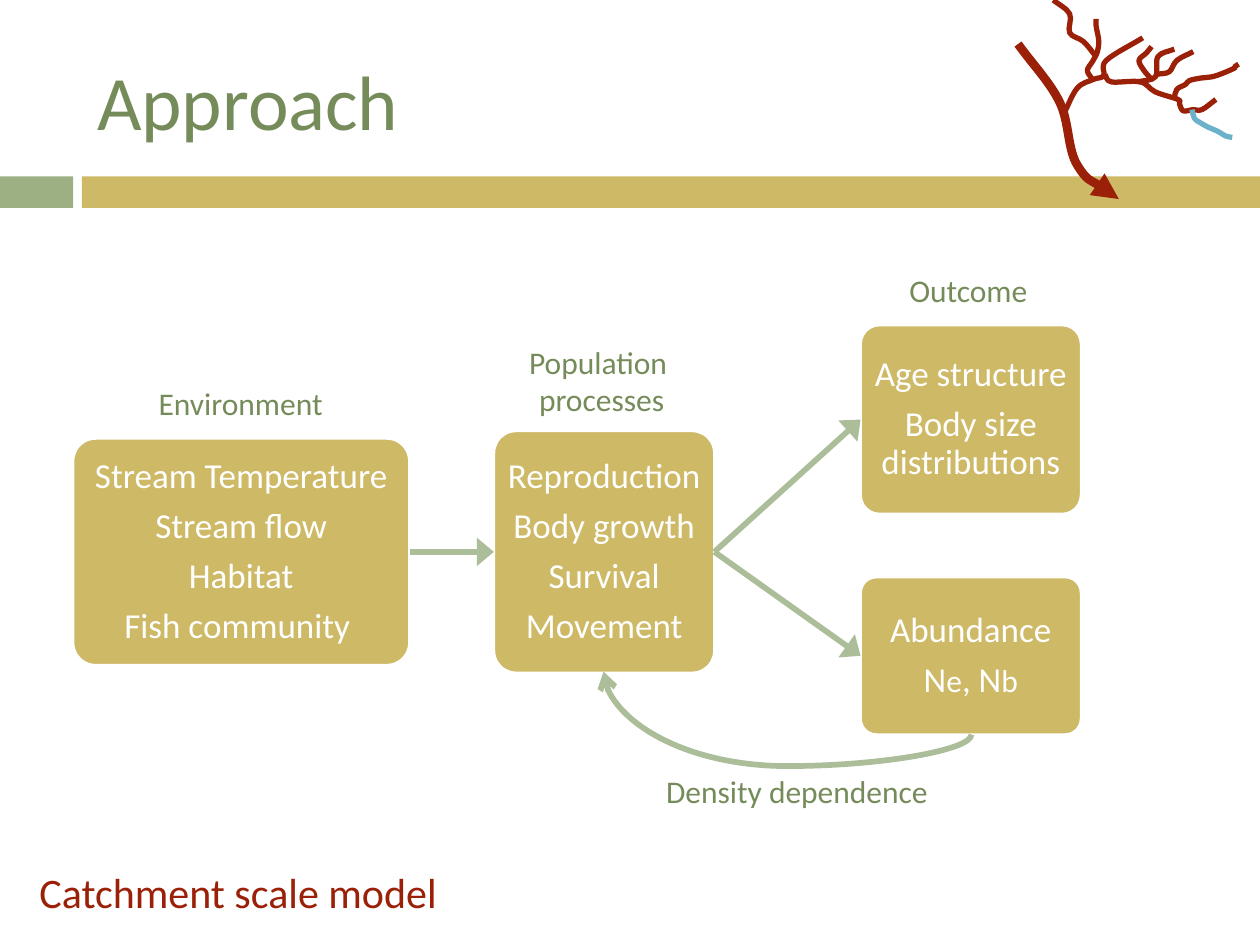
from lxml import etree
from pptx import Presentation
from pptx import util as u
from pptx.dml.color import RGBColor
from pptx.enum import shapes, text
from pptx.oxml.ns import qn

COLORS = {
    "gold": "CEB966",
    "sage": "9CB084",
    "arrow": "ACBD99",
    "label": "758C5A",
    "red": "9A2008",
    "blue": "6BB1C9",
    "white": "FFFFFF",
}
FONT = "Calibri"

# River network: points along each branch, in inches
MAIN_STEM = [(8.88, 1.58), (8.55, 1.31), (8.41, 0.81), (8.08, 0.35)]
STUDY_BRANCH = [(9.46, 0.87), (9.48, 0.94), (9.52, 0.97), (9.59, 1.01),
                (9.66, 1.04), (9.73, 1.08), (9.78, 1.09)]
TRIBUTARIES = [
    [(8.77, 0.59), (8.82, 0.65), (9.05, 0.65), (9.17, 0.73), (9.35, 0.79),
     (9.36, 0.82), (9.39, 0.88), (9.47, 0.87), (9.54, 0.87), (9.65, 0.79)],
    [(9.32, 0.78), (9.34, 0.71), (9.41, 0.67), (9.44, 0.64), (9.53, 0.62),
     (9.62, 0.61), (9.71, 0.58), (9.8, 0.54), (9.8, 0.53), (9.83, 0.51)],
    [(8.67, 0.63), (8.63, 0.56), (8.67, 0.49), (8.71, 0.41), (8.72, 0.32),
     (8.7, 0.21), (8.7, 0.15)],
    [(8.7, 0.45), (8.6, 0.33), (8.49, 0.26), (8.49, 0.11), (8.36, 0)],
    [(8.44, 0.91), (8.55, 0.7), (8.68, 0.63), (8.76, 0.6), (8.78, 0.48), (9.07, 0.3)],
    [(9.03, 0.65), (9.17, 0.61), (9.19, 0.45), (9.32, 0.39)],
    [(9.18, 0.59), (9.28, 0.57), (9.34, 0.48), (9.47, 0.41)],
    [(9.14, 0.63), (9.08, 0.56), (9.04, 0.48), (9.1, 0.42), (9.14, 0.37)],
]


def bezier_points(points):
    """Return two control points and an end point for each smooth segment."""
    def beyond(end, inner):
        return tuple(2 * e - i for e, i in zip(end, inner))

    ends = [beyond(points[0], points[1]), *points, beyond(points[-1], points[-2])]
    curve = []
    for a, b, c, d in zip(ends, ends[1:], ends[2:], ends[3:]):
        curve += [tuple(q + (r - p) / 6 for p, q, r in zip(a, b, c)),
                  tuple(r - (s - q) / 6 for q, r, s in zip(b, c, d)),
                  c]
    return curve


class SlideBuilder:
    def __init__(self, slide):
        self.s = slide

    def style_run(self, r, size, color):
        r.font.name = FONT
        r.font.size = u.Pt(size)
        r.font.color.rgb = RGBColor.from_string(COLORS[color])

    def style_line(self, sp, color, width, end=None, **head):
        """Format a line; end is headEnd or tailEnd when it has an arrowhead."""
        sp.line.color.rgb = RGBColor.from_string(COLORS[color])
        sp.line.width = u.Pt(width)
        if end:
            ln = sp._element.spPr.find(qn("a:ln"))
            etree.SubElement(ln, qn(f"a:{end}"), **head)

    def title(self, words, x, y, w, h):
        sp = self.s.shapes.title
        sp.left, sp.top, sp.width, sp.height = map(u.Inches, (x, y, w, h))
        tf = sp.text_frame
        tf.text = words
        tf.vertical_anchor = text.MSO_ANCHOR.MIDDLE
        p = tf.paragraphs[0]
        p.alignment = text.PP_ALIGN.LEFT
        self.style_run(p.runs[0], 44, "label")

    def shape(self, kind, x, y, w, h, color):
        sp = self.s.shapes.add_shape(kind, *map(u.Inches, (x, y, w, h)))
        sp.shadow.inherit = False
        sp.fill.solid()
        sp.fill.fore_color.rgb = RGBColor.from_string(COLORS[color])
        return sp

    def bar(self, x, w, color):
        sp = self.shape(shapes.MSO_SHAPE.RECTANGLE, x, 1.4, w, 0.25, color)
        sp.line.fill.background()

    def box(self, x, y, w, h, lines):
        """Add a rounded box; each line is a list of (words, size) runs."""
        sp = self.shape(shapes.MSO_SHAPE.ROUNDED_RECTANGLE, x, y, w, h, "gold")
        sp.adjustments[0] = 0.1
        self.style_line(sp, "white", 1.5)
        tf = sp.text_frame
        tf.word_wrap = True
        tf.vertical_anchor = text.MSO_ANCHOR.MIDDLE
        tf.margin_left = tf.margin_right = u.Inches(0.03)
        tf.margin_top = tf.margin_bottom = u.Inches(0.08)
        for i, runs in enumerate(lines):
            p = tf.add_paragraph() if i else tf.paragraphs[0]
            p.alignment = text.PP_ALIGN.CENTER
            p.line_spacing = 0.9
            p.space_after = u.Pt(7)
            for words, size in runs:
                r = p.add_run()
                r.text = words
                self.style_run(r, size, "white")
        return sp

    def label(self, words, x, y, w, h=0.4, size=18, color="label"):
        sp = self.s.shapes.add_textbox(*map(u.Inches, (x, y, w, h)))
        tf = sp.text_frame
        tf.text = words
        tf.word_wrap = False
        tf.auto_size = text.MSO_AUTO_SIZE.SHAPE_TO_FIT_TEXT
        for p in tf.paragraphs:
            p.alignment = text.PP_ALIGN.CENTER
            self.style_run(p.runs[0], size, color)

    def connector(self, kind, ends, **head):
        cn = self.s.shapes.add_connector(kind, *map(u.Inches, ends))
        self.style_line(cn, "arrow", 3.25, "tailEnd", **head)
        etree.SubElement(cn._element.spPr, qn("a:effectLst"))
        return cn

    def arrow(self, start, end):
        """Join the right side of one box to the left side of another."""
        cn = self.connector(shapes.MSO_CONNECTOR.STRAIGHT, (0, 0, 1, 1),
                            type="triangle", w="lg", len="med")
        cn.begin_connect(start, 3)
        cn.end_connect(end, 1)

    def feedback_arrow(self, x1, y1, x2, y2):
        """Curve from one bottom side to another, sagging below both."""
        mid_x, mid_y = (x1 + x2) / 2, (y1 + y2) / 2
        half_w, half_h = (y1 - y2) / 2, (x1 - x2) / 2
        cn = self.connector(
            shapes.MSO_CONNECTOR.CURVE,
            (mid_x + half_w, mid_y - half_h, mid_x - half_w, mid_y + half_h),
            type="arrow")
        spPr = cn._element.spPr
        spPr.find(qn("a:xfrm")).set("rot", str(90 * 60000))
        geom = spPr.find(qn("a:prstGeom"))
        guides = geom.find(qn("a:avLst"))
        if guides is None:
            guides = etree.SubElement(geom, qn("a:avLst"))
        etree.SubElement(guides, qn("a:gd"), name="adj1", fmla="val -50000")

    def stream(self, points, color="red", width=3, end=None):
        """Draw a smooth open curve through the points."""
        fb = self.s.shapes.build_freeform(*map(u.Inches, points[0]), scale=1.0)
        fb.add_line_segments(
            [tuple(map(u.Inches, pt)) for pt in bezier_points(points)], close=False)
        sp = fb.convert_to_shape()
        sp.shadow.inherit = False
        sp.fill.background()
        self.style_line(sp, color, width, end, type="triangle")
        segments = list(sp._element.iter(qn("a:lnTo")))
        outline = segments[0].getparent()
        for i in range(0, len(segments), 3):
            cubic = etree.SubElement(outline, qn("a:cubicBezTo"))
            for segment in segments[i:i + 3]:
                cubic.append(segment[0])
                outline.remove(segment)


def plain(*lines):
    return [[(words, 20)] for words in lines]


def main():
    prs = Presentation()
    prs.slide_width, prs.slide_height = u.Inches(10), u.Inches(7.5)
    b = SlideBuilder(prs.slides.add_slide(prs.slide_layouts[5]))

    b.bar(0, 0.58, "sage")
    b.bar(0.65, 9.35, "gold")
    b.title("Approach", 0.67, 0.25, 8.92, 1.08)

    environment = b.box(0.58, 3.48, 2.67, 1.8, plain(
        "Stream Temperature", "Stream flow", "Habitat", "Fish community "))
    processes = b.box(3.92, 3.42, 1.75, 1.92, plain(
        "Reproduction", "Body growth", "Survival", "Movement"))
    structure = b.box(6.83, 2.58, 1.75, 1.5, plain(
        "Age structure", "Body size distributions"))
    abundance = b.box(6.83, 4.58, 1.75, 1.25, plain("Abundance") + [
        [("N", 20), ("e", 18), (", N", 20), ("b", 18)]])

    b.arrow(environment, processes)
    b.arrow(processes, structure)
    b.arrow(processes, abundance)
    b.feedback_arrow(7.71, 5.83, 4.79, 5.33)

    b.label("Environment", 1.15, 3, 1.52)
    b.label("Population \nprocesses", 4.09, 2.67, 1.37, 0.71)
    b.label("Outcome", 7.11, 2.1, 1.15)
    b.label("Density dependence", 5.17, 6.08, 2.31)
    b.label("Catchment scale model", 0.2, 6.83, 3.38, 0.5, 24, "red")

    b.stream(MAIN_STEM, width=5, end="headEnd")
    for branch in TRIBUTARIES:
        b.stream(branch)
    b.stream(STUDY_BRANCH, "blue")

    prs.save("out.pptx")


if __name__ == "__main__":
    main()
